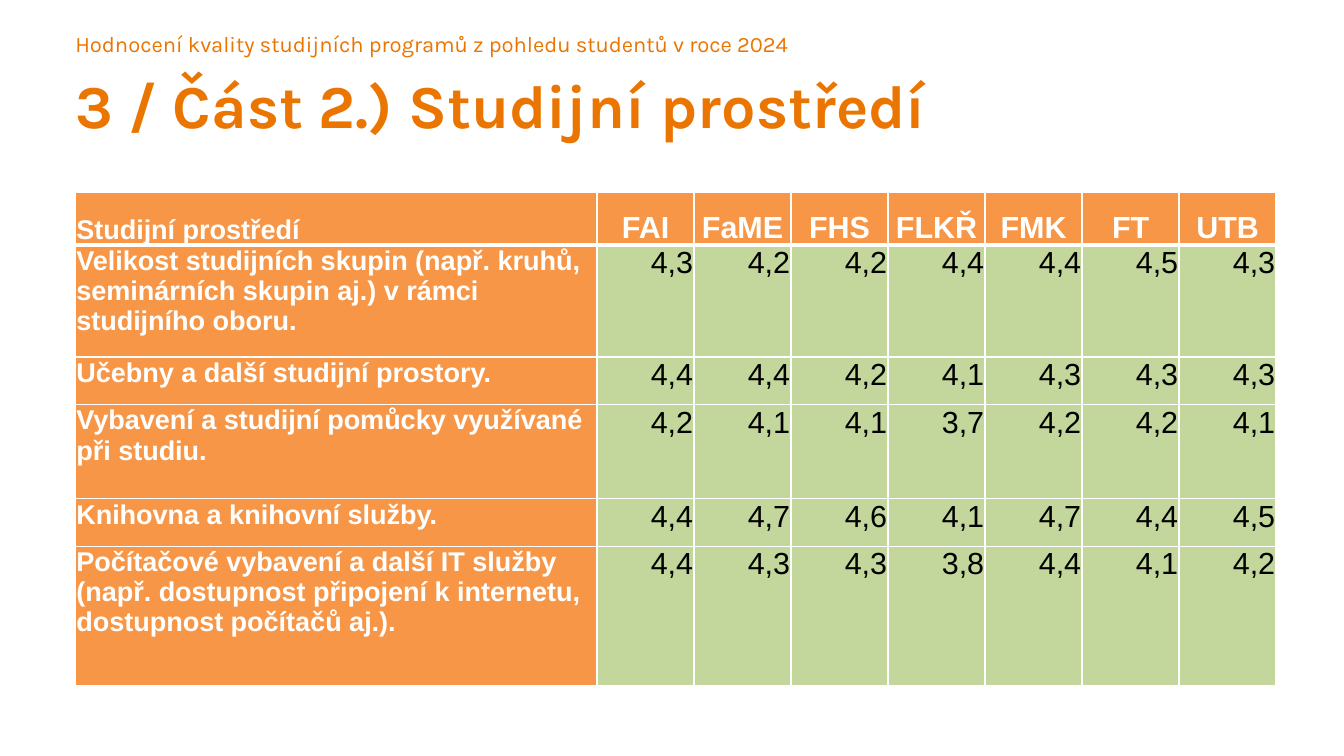
from lxml import etree
from pptx import Presentation
from pptx.dml.color import RGBColor
from pptx.enum.text import MSO_ANCHOR, MSO_AUTO_SIZE, PP_ALIGN
from pptx.oxml.ns import qn
from pptx.util import Cm, Pt

TOP, BOTTOM = MSO_ANCHOR.TOP, MSO_ANCHOR.BOTTOM
LEFT, CENTER, RIGHT = PP_ALIGN.LEFT, PP_ALIGN.CENTER, PP_ALIGN.RIGHT
FIXED = MSO_AUTO_SIZE.NONE

BRAND = RGBColor(0xEA, 0x75, 0x00)
ORANGE = RGBColor(0xF7, 0x96, 0x46)
GREEN = RGBColor(0xC3, 0xD6, 0x9B)
WHITE = RGBColor(0xFF, 0xFF, 0xFF)
BLACK = RGBColor(0x00, 0x00, 0x00)

TOPIC = "Hodnocení kvality studijních programů z pohledu studentů v roce 2024"
TITLE = "3 / Část 2.) Studijní prostředí"
HEADS = ["Studijní prostředí", "FAI", "FaME", "FHS", "FLKŘ", "FMK", "FT", "UTB"]
# Row height in cm, question, score per faculty
ROWS = [
    (2.34, "Velikost studijních skupin (např. kruhů, seminárních skupin aj.) "
           "v rámci studijního oboru.", "4,3 4,2 4,2 4,4 4,4 4,5 4,3"),
    (0.99, "Učebny a další studijní prostory.", "4,4 4,4 4,2 4,1 4,3 4,3 4,3"),
    (1.96, "Vybavení a studijní pomůcky využívané při studiu.",
     "4,2 4,1 4,1 3,7 4,2 4,2 4,1"),
    (0.99, "Knihovna a knihovní služby.", "4,4 4,7 4,6 4,1 4,7 4,4 4,5"),
    (2.9, "Počítačové vybavení a další IT služby (např. dostupnost připojení "
          "k internetu, dostupnost počítačů aj.).", "4,4 4,3 4,3 3,8 4,4 4,1 4,2"),
]
HEAD_HIGH = 1.09
LABEL_WIDE = 10.87


def style(para, name, size, color, bold, align):
    font = para.font
    font.name, font.size, font.bold = name, Pt(size), bold
    font.color.rgb = color
    para.alignment = align


def heading(shape, text, size, bold, left, top, width, height):
    shape.left, shape.top = Cm(left), Cm(top)
    shape.width, shape.height = Cm(width), Cm(height)
    frame = shape.text_frame
    frame.text = text
    frame.word_wrap = True
    frame.auto_size = FIXED
    frame.vertical_anchor = TOP
    frame.margin_left = frame.margin_right = 0
    frame.margin_top = frame.margin_bottom = 0
    style(frame.paragraphs[0], "Karla", size, BRAND, bold, LEFT)


def border(cell, **widths):
    """Draw white cell edges; keys are L, R, T, B and values are points."""
    props = cell._tc.get_or_add_tcPr()
    for side, width in widths.items():
        line = etree.SubElement(props, qn("a:ln" + side), w=str(Pt(width)))
        fill = etree.SubElement(line, qn("a:solidFill"))
        etree.SubElement(fill, qn("a:srgbClr"), val=str(WHITE))


def fill_cell(cell, text, row, col):
    head, label = row == 0, col == 0
    name = head and not label
    border(cell, L=1, R=1, T=3 if row == 1 else 1, B=3 if head else 1)
    cell.fill.solid()
    cell.fill.fore_color.rgb = ORANGE if head or label else GREEN
    cell.margin_left = cell.margin_right = Cm(0.13 if name else 0.02)
    cell.margin_top = Cm(0 if name else 0.02)
    cell.margin_bottom = 0
    cell.vertical_anchor = BOTTOM if head else TOP
    cell.text = text
    para = cell.text_frame.paragraphs[0]
    align = LEFT if label else CENTER if head else RIGHT
    style(para, "Arial", 16 if label else 18,
          WHITE if head or label else BLACK, head or label, align)
    if name:
        para.line_spacing = 1.5


def score_table(slide, left, top, width):
    highs = [HEAD_HIGH] + [high for high, _, _ in ROWS]
    texts = [HEADS] + [[label, *marks.split()] for _, label, marks in ROWS]
    frame = slide.shapes.add_table(len(texts), len(HEADS), Cm(left), Cm(top),
                                   Cm(width), Cm(sum(highs)))
    table = frame.table
    table.first_row = table.horz_banding = False
    score_wide = (width - LABEL_WIDE) / (len(HEADS) - 1)
    for col, column in enumerate(table.columns):
        column.width = Cm(score_wide if col else LABEL_WIDE)
    for row, (high, line) in enumerate(zip(highs, texts)):
        table.rows[row].height = Cm(high)
        for col, text in enumerate(line):
            fill_cell(table.cell(row, col), text, row, col)


def score_slide(deck):
    slide = deck.slides.add_slide(deck.slide_layouts[5])
    topic = slide.shapes.add_textbox(0, 0, 0, 0)
    heading(topic, TOPIC, 13, False, 1.57, 0.64, 25.2, 0.56)
    heading(slide.shapes.title, TITLE, 36, True, 1.57, 1.4, 25.86, 1.55)
    score_table(slide, 1.57, 4.01, 25.02)


def main():
    deck = Presentation()
    deck.slide_width, deck.slide_height = Cm(28), Cm(15.75)
    score_slide(deck)
    deck.save("out.pptx")


if __name__ == "__main__":
    main()
